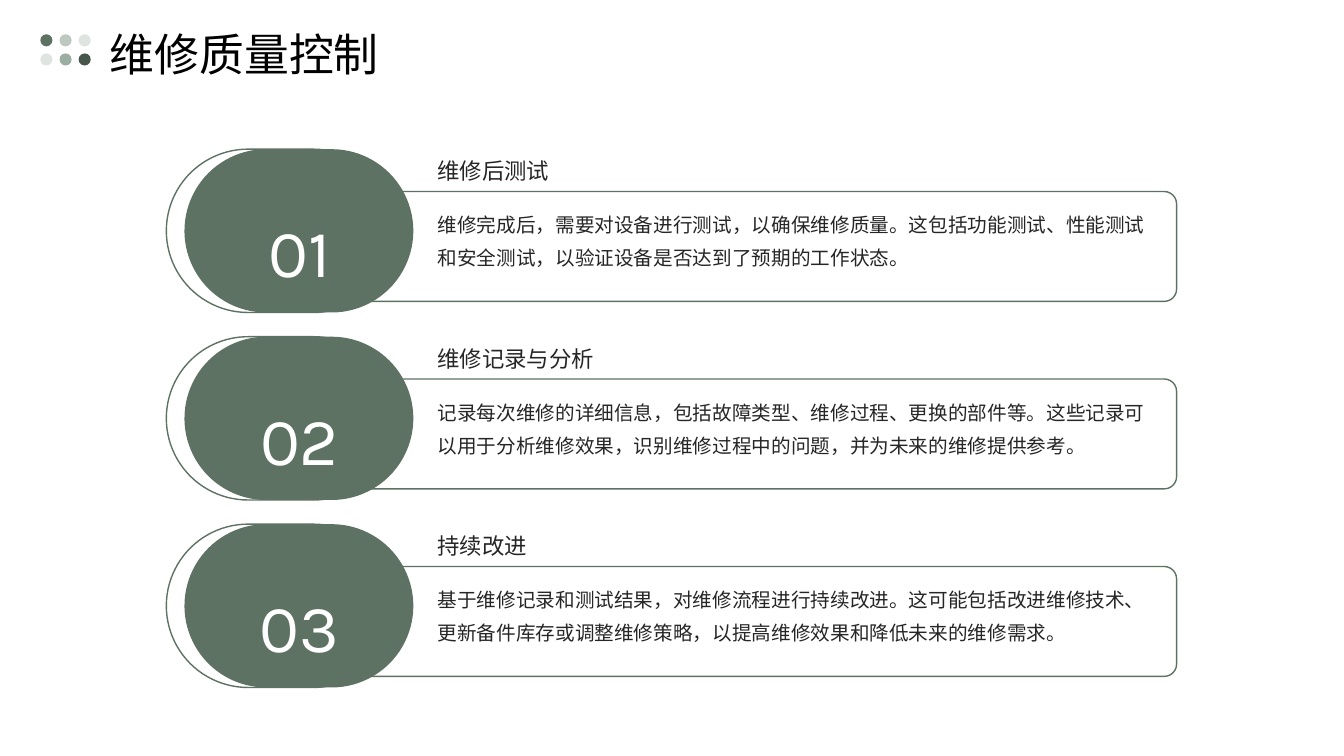
from lxml import etree
from pptx import Presentation
from pptx.dml.color import RGBColor
from pptx.enum.shapes import MSO_SHAPE
from pptx.enum.text import MSO_ANCHOR, PP_ALIGN
from pptx.oxml.ns import qn
from pptx.util import Inches, Pt

ROUND_RECT, OVAL = MSO_SHAPE.ROUNDED_RECTANGLE, MSO_SHAPE.OVAL
TOP, MIDDLE, BOTTOM = MSO_ANCHOR.TOP, MSO_ANCHOR.MIDDLE, MSO_ANCHOR.BOTTOM
LEFT, CENTER = PP_ALIGN.LEFT, PP_ALIGN.CENTER

WHITE = RGBColor(0xFF, 0xFF, 0xFF)
BLACK = RGBColor(0x00, 0x00, 0x00)
INK = RGBColor(0x26, 0x26, 0x26)
GREEN = RGBColor(0x5E, 0x72, 0x64)
DARK_GREEN = RGBColor(0x46, 0x56, 0x4B)
MID_GREEN = RGBColor(0x9C, 0xAD, 0xA1)
LIGHT_GREEN = RGBColor(0xBD, 0xC8, 0xC0)
PALE_GREEN = RGBColor(0xDE, 0xE4, 0xE0)

CJK_FONT, NUMBER_FONT = "Noto Sans CJK SC", "Karla"
DOT_ROWS = [
    (GREEN, LIGHT_GREEN, PALE_GREEN),
    (PALE_GREEN, MID_GREEN, DARK_GREEN),
]
STEPS = [
    ("维修后测试",
     "维修完成后，需要对设备进行测试，以确保维修质量。这包括功能测试、性能测试和安全测试，以验证设备是否达到了预期的工作状态。"),
    ("维修记录与分析",
     "记录每次维修的详细信息，包括故障类型、维修过程、更换的部件等。这些记录可以用于分析维修效果，识别维修过程中的问题，并为未来的维修提供参考。"),
    ("持续改进",
     "基于维修记录和测试结果，对维修流程进行持续改进。这可能包括改进维修技术、更新备件库存或调整维修策略，以提高维修效果和降低未来的维修需求。"),
]
FIRST_TOP, STEP_PITCH = 1.48, 1.86
DOT_LEFT, DOT_TOP, DOT_PITCH, DOT_SIZE = 0.4, 0.34, 0.19, 0.12


class SlideBuilder:
    def __init__(self, slide):
        self.s = slide

    def shape(self, kind, x, y, w, h, fill, line=None, radius=None):
        sp = self.s.shapes.add_shape(kind, Inches(x), Inches(y), Inches(w), Inches(h))
        sp.shadow.inherit = False
        sp.fill.solid()
        sp.fill.fore_color.rgb = fill
        if line is None:
            sp.line.fill.background()
        else:
            sp.line.color.rgb = line
            sp.line.width = Pt(1)
        if radius is not None:
            sp.adjustments[0] = radius

    def text(self, text, x, y, w, h, size, color=INK, font=CJK_FONT,
             anchor=TOP, align=LEFT, spacing=1.2):
        box = self.s.shapes.add_textbox(Inches(x), Inches(y), Inches(w), Inches(h))
        tf = box.text_frame
        tf.word_wrap = True
        tf.vertical_anchor = anchor
        tf.margin_left = tf.margin_right = tf.margin_top = tf.margin_bottom = 0
        p = tf.paragraphs[0]
        p.text = text
        p.alignment = align
        p.line_spacing = spacing
        p.font.size = Pt(size)
        p.font.color.rgb = color
        p.font.name = font
        # East Asian characters take their typeface from a:ea
        props = p._p.pPr.find(qn("a:defRPr"))
        etree.SubElement(props, qn("a:ea"), typeface=font)

    def step(self, number, top, heading, body):
        self.shape(ROUND_RECT, 1.65, top, 2.27, 1.62, WHITE, GREEN, 0.5)
        self.shape(ROUND_RECT, 2.7, top + 0.42, 8.97, 1.09, WHITE, GREEN, 0.112)
        self.shape(ROUND_RECT, 1.83, top, 2.27, 1.62, GREEN, radius=0.5)
        self.text(f"{number:02}", 2.24, top + 0.2, 1.46, 1.22, 48, WHITE,
                  NUMBER_FONT, MIDDLE, CENTER, 1.5)
        self.text(body, 4.34, top + 0.54, 7.07, 0.84, 14, spacing=1.4)
        self.text(heading, 4.34, top - 0.25, 7.07, 0.6, 16, anchor=BOTTOM)

    def header(self, title):
        self.text(title, 1.09, 0.24, 11.84, 0.47, 32, BLACK, anchor=MIDDLE)
        for row, colors in enumerate(DOT_ROWS):
            for col, color in enumerate(colors):
                self.shape(OVAL, DOT_LEFT + col * DOT_PITCH, DOT_TOP + row * DOT_PITCH,
                           DOT_SIZE, DOT_SIZE, color)


def main():
    prs = Presentation()
    prs.slide_width, prs.slide_height = Inches(13.33), Inches(7.5)
    builder = SlideBuilder(prs.slides.add_slide(prs.slide_layouts[6]))
    for i, (heading, body) in enumerate(STEPS):
        builder.step(i + 1, FIRST_TOP + i * STEP_PITCH, heading, body)
    builder.header("维修质量控制")
    prs.save("out.pptx")


if __name__ == "__main__":
    main()
